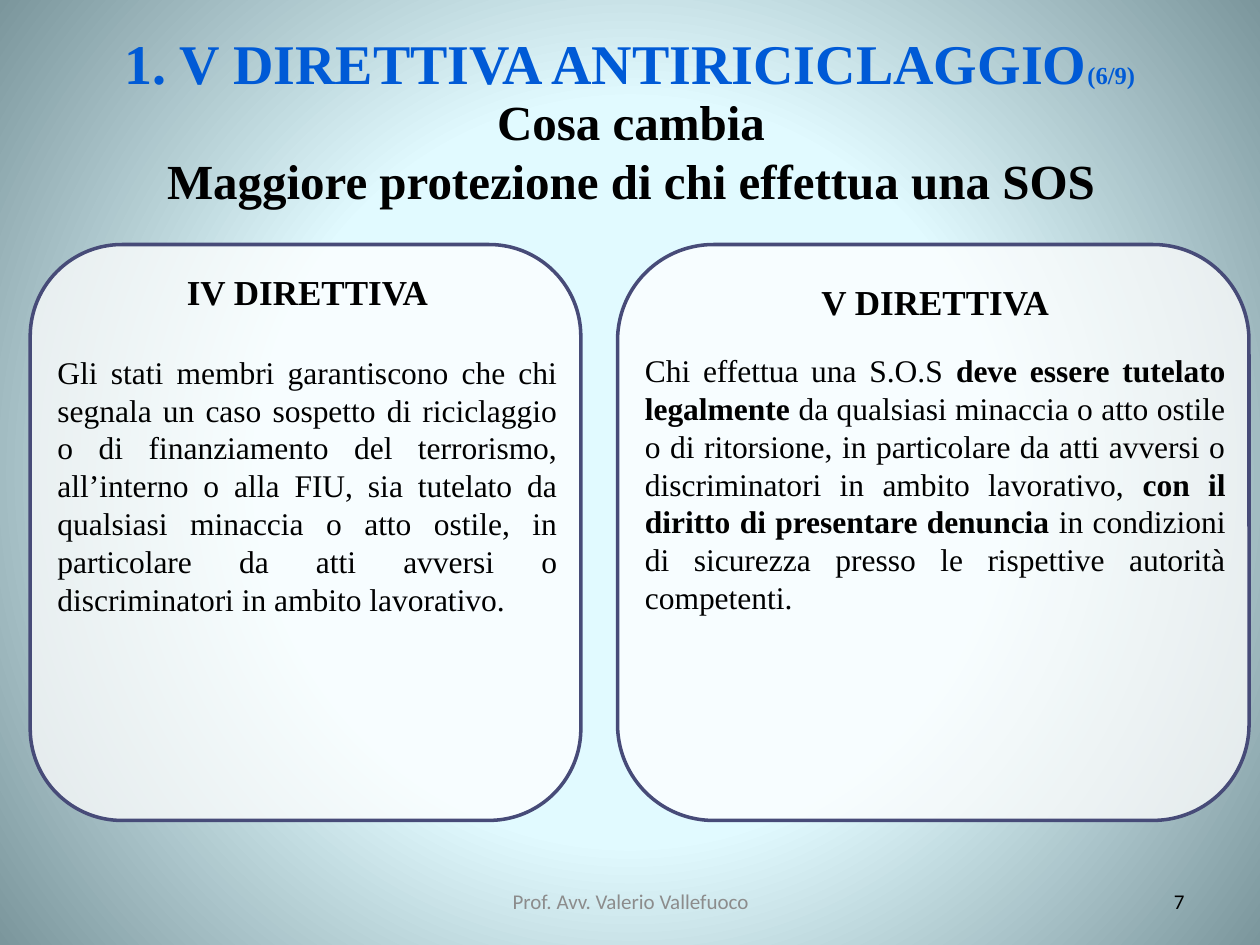
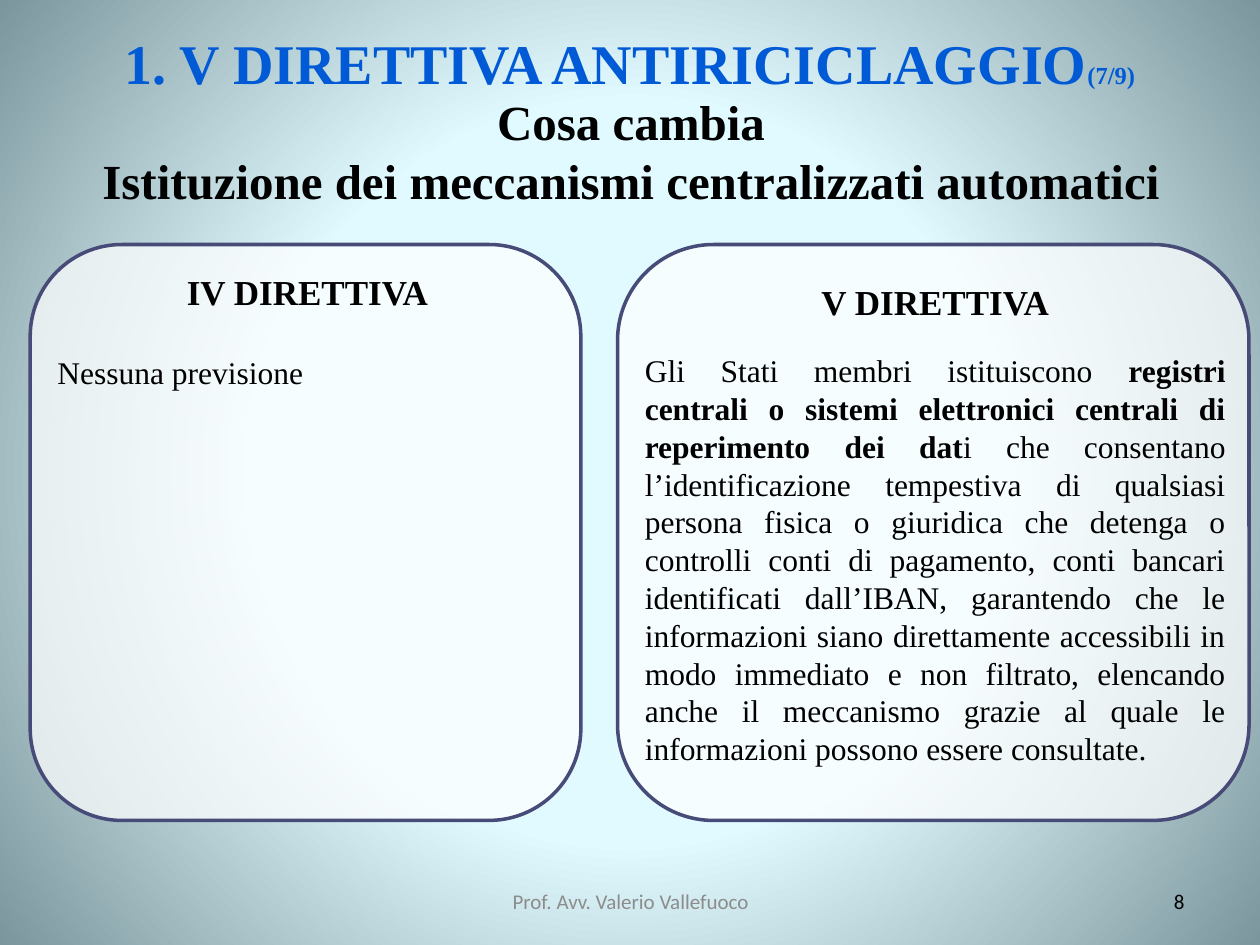
from dataclasses import dataclass

from lxml.etree import SubElement
from pptx import Presentation
from pptx.dml.color import RGBColor
from pptx.enum.shapes import MSO_SHAPE
from pptx.enum.text import MSO_ANCHOR, MSO_AUTO_SIZE, PP_ALIGN
from pptx.oxml import parse_xml
from pptx.oxml.ns import nsdecls, qn
from pptx.util import Cm, Pt

SERIF, SANS = "Times New Roman", "Calibri"
BLACK, WHITE, GREY = "000000", "FFFFFF", "8C8C8C"
TITLE_BLUE, CARD_BORDER = "005AD6", "474B78"
GLOW_CENTRE, GLOW_EDGE = "E1FAFF", "7B969C"

CARD_TOP, CARD_HEIGHT = 4.93, 11.61
FOOTER_TOP, FOOTER_HEIGHT = 17.65, 1.02


@dataclass
class Column:
    """Where one directive stands and how its text is spaced, in cm and points."""
    heading: str
    left: float
    width: float
    text_drop: float
    heading_gap: float


OLD_DIRECTIVE = Column("IV DIRETTIVA", 0.61, 11.1, 0.4, 23)
NEW_DIRECTIVE = Column("V DIRETTIVA", 12.45, 12.73, 0.61, 16.1)


@dataclass
class Comparison:
    """One slide; each body is a list of (text, bold) with its text height in cm."""
    number: int
    step: str
    topic: str
    old_body: list
    old_height: float
    new_body: list
    new_height: float
    opacities: tuple


COMPARISONS = [
    Comparison(
        7, "(6/9)", "Maggiore protezione di chi effettua una SOS",
        [("Gli stati membri garantiscono che chi segnala un caso sospetto di "
          "riciclaggio o di finanziamento del terrorismo, all’interno o alla FIU, "
          "sia tutelato da qualsiasi minaccia o atto ostile, in particolare da atti "
          "avversi o discriminatori in ambito lavorativo.", False)], 7.34,
        [("Chi effettua una S.O.S ", False),
         ("deve essere tutelato legalmente ", True),
         ("da qualsiasi minaccia o atto ostile o di ritorsione, in particolare da "
          "atti avversi o discriminatori in ambito lavorativo, ", False),
         ("con il diritto di presentare denuncia ", True),
         ("in condizioni di sicurezza presso le rispettive autorità competenti.",
          False)], 7.09,
        (75, 76)),
    Comparison(
        8, "(7/9)", "Istituzione dei meccanismi centralizzati automatici",
        [("Nessuna previsione", False)], 2.74,
        [("Gli Stati membri istituiscono ", False),
         ("registri centrali o sistemi elettronici centrali di reperimento dei dat",
          True),
         ("i che consentano l’identificazione tempestiva di qualsiasi persona "
          "fisica o giuridica che detenga o controlli conti di pagamento, conti "
          "bancari identificati dall’IBAN, garantendo che le informazioni siano "
          "direttamente accessibili in modo immediato e non filtrato, elencando "
          "anche il meccanismo grazie al quale le informazioni possono essere "
          "consultate.", False)], 10.19,
        (73, 73)),
]


def rgb(value):
    return RGBColor.from_string(value)


def paint_background(master):
    """Give every slide the round glow."""
    master.background.fill.solid()
    properties = master.element.xpath(".//p:bgPr")[0]
    glow = parse_xml(
        f'<a:gradFill {nsdecls("a")} rotWithShape="1"><a:gsLst>'
        f'<a:gs pos="47000"><a:srgbClr val="{GLOW_CENTRE}"/></a:gs>'
        f'<a:gs pos="100000"><a:srgbClr val="{GLOW_EDGE}"/></a:gs></a:gsLst>'
        '<a:path path="circle"><a:fillToRect l="50000" t="50000" r="50000" '
        'b="50000"/></a:path></a:gradFill>')
    properties.replace(properties[0], glow)


def add_text_frame(slide, left, top, width, height, grow=True):
    box = slide.shapes.add_textbox(Cm(left), Cm(top), Cm(width), Cm(height))
    frame = box.text_frame
    frame.word_wrap = True
    if grow:
        frame.auto_size = MSO_AUTO_SIZE.SHAPE_TO_FIT_TEXT
    else:
        frame.vertical_anchor = MSO_ANCHOR.MIDDLE
    return frame


def add_run(paragraph, text, size, bold=False, color=BLACK, font=SERIF):
    run = paragraph.add_run()
    run.text = text
    run.font.name = font
    run.font.size = Pt(size)
    run.font.bold = bold
    run.font.color.rgb = rgb(color)


def add_header(slide, step, topic):
    title = add_text_frame(slide, 0.5, 0.46, 24.4, 1.62).paragraphs[0]
    title.alignment = PP_ALIGN.CENTER
    add_run(title, "1. V DIRETTIVA ANTIRICICLAGGIO", 32, True, TITLE_BLUE)
    add_run(title, step, 14, True, TITLE_BLUE)

    subtitle = add_text_frame(slide, 0.02, 1.73, 25.4, 2.64)
    for line, text in enumerate(("Cosa cambia", topic)):
        paragraph = subtitle.add_paragraph() if line else subtitle.paragraphs[0]
        paragraph.alignment = PP_ALIGN.CENTER
        add_run(paragraph, text, 28, True)


def add_card(slide, column, opacity):
    card = slide.shapes.add_shape(
        MSO_SHAPE.ROUNDED_RECTANGLE, Cm(column.left), Cm(CARD_TOP),
        Cm(column.width), Cm(CARD_HEIGHT))
    card.shadow.inherit = False
    card.fill.solid()
    card.fill.fore_color.rgb = rgb(WHITE)
    white = card.element.spPr.find(qn("a:solidFill"))[0]
    SubElement(white, qn("a:alpha")).set("val", str(opacity * 1000))
    card.line.color.rgb = rgb(CARD_BORDER)
    card.line.width = Pt(2)


def add_directive_text(slide, column, body, height):
    frame = add_text_frame(slide, column.left + 0.3, CARD_TOP + column.text_drop,
                           column.width - 0.52, height)
    heading = frame.paragraphs[0]
    heading.alignment = PP_ALIGN.CENTER
    heading.space_after = Pt(column.heading_gap)
    add_run(heading, column.heading, 20, True)
    provision = frame.add_paragraph()
    provision.alignment = PP_ALIGN.JUSTIFY
    for text, bold in body:
        add_run(provision, text, 18, bold)


def add_footer(slide, number):
    for left, width, text, alignment, color in (
            (8.69, 8.05, "Prof. Avv. Valerio Vallefuoco", PP_ALIGN.CENTER, GREY),
            (18.21, 5.92, str(number), PP_ALIGN.RIGHT, BLACK)):
        frame = add_text_frame(slide, left, FOOTER_TOP, width, FOOTER_HEIGHT,
                               grow=False)
        frame.paragraphs[0].alignment = alignment
        add_run(frame.paragraphs[0], text, 12, color=color, font=SANS)


def add_comparison(slide, comparison):
    add_header(slide, comparison.step, comparison.topic)
    columns = (OLD_DIRECTIVE, NEW_DIRECTIVE)
    for column, opacity in zip(columns, comparison.opacities):
        add_card(slide, column, opacity)
    add_directive_text(slide, OLD_DIRECTIVE, comparison.old_body,
                       comparison.old_height)
    add_directive_text(slide, NEW_DIRECTIVE, comparison.new_body,
                       comparison.new_height)
    add_footer(slide, comparison.number)


def main():
    deck = Presentation()
    deck.slide_width, deck.slide_height = Cm(25.4), Cm(19.05)
    paint_background(deck.slide_master)
    blank = deck.slide_layouts[6]
    for comparison in COMPARISONS:
        add_comparison(deck.slides.add_slide(blank), comparison)
    deck.save("out.pptx")


if __name__ == "__main__":
    main()
